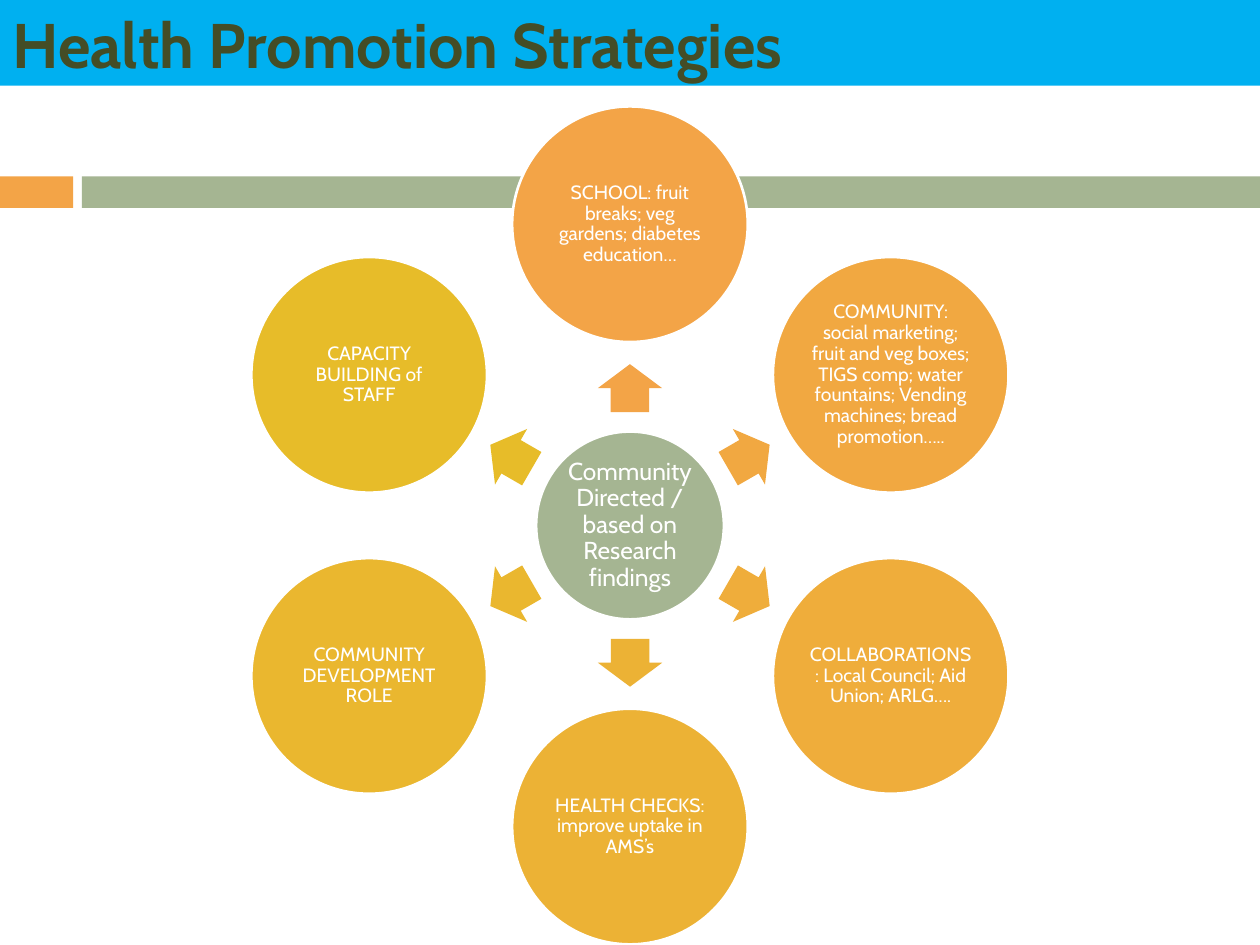
import math
from pptx import Presentation
from pptx import util as u
from pptx.dml.color import RGBColor
from pptx.enum import shapes, text

FONT = "Cabin"
WHITE = "FFFFFF"
SAGE = "A5B592"
HUB = (5, 4.17)
RING = 2.39
REACH = 1.09

SPOKES = [
    ("SCHOOL: fruit breaks; veg gardens; diabetes education…", "F3A447"),
    ("COMMUNITY: social marketing; fruit and veg boxes; TIGS comp; "
     "water fountains; Vending machines; bread promotion…..", "F1A841"),
    ("COLLABORATIONS: Local Council; Aid Union; ARLG….", "EFAD3B"),
    ("HEALTH CHECKS: improve uptake in AMS’s", "ECB235"),
    ("COMMUNITY DEVELOPMENT ROLE", "EAB72F"),
    ("CAPACITY BUILDING of STAFF", "E7BC29"),
]


def color(code):
    return RGBColor.from_string(code)


def polar(angle, dist):
    turn = math.radians(angle)
    return HUB[0] + dist * math.cos(turn), HUB[1] + dist * math.sin(turn)


class Deck:
    def __init__(self, slide):
        self.slide = slide

    def shape(self, kind, left, top, width, height, fill):
        item = self.slide.shapes.add_shape(
            kind, *map(u.Inches, (left, top, width, height)))
        item.shadow.inherit = False
        item.fill.solid()
        item.fill.fore_color.rgb = color(fill)
        item.line.fill.background()
        return item

    def bar(self, left, top, width, height, fill):
        return self.shape(shapes.MSO_SHAPE.RECTANGLE, left, top, width, height, fill)

    def label(self, item, words, size, ink, align, inset):
        frame = item.text_frame
        frame.word_wrap = True
        frame.vertical_anchor = text.MSO_ANCHOR.MIDDLE
        frame.margin_left = frame.margin_right = u.Inches(inset)
        frame.margin_top = frame.margin_bottom = u.Inches(0.02)
        para = frame.paragraphs[0]
        para.text = words
        para.alignment = align
        para.font.name = FONT
        para.font.size = u.Pt(size)
        para.font.color.rgb = color(ink)
        return para

    def title(self, words):
        band = self.bar(0, 0, 10, 0.68, "00B0F0")
        para = self.label(band, words, 36, "444D26", text.PP_ALIGN.LEFT, 0.1)
        para.font.bold = True

    def disc(self, center, size, fill, words, points):
        x, y = center
        item = self.shape(shapes.MSO_SHAPE.OVAL, x - size / 2, y - size / 2,
                          size, size, fill)
        item.line.color.rgb = color(WHITE)
        item.line.width = u.Pt(1.5)
        para = self.label(item, words, points, WHITE, text.PP_ALIGN.CENTER, 0.02)
        para.line_spacing = 0.9

    def arrow(self, center, angle, fill):
        x, y = center
        width, height = 0.38, 0.51
        item = self.shape(shapes.MSO_SHAPE.RIGHT_ARROW, x - width / 2,
                          y - height / 2, width, height, fill)
        item.adjustments[0] = 0.6
        item.adjustments[1] = 0.5
        item.rotation = angle % 360


def main():
    show = Presentation()
    show.slide_width = u.Inches(10)
    show.slide_height = u.Inches(7.5)
    deck = Deck(show.slides.add_slide(show.slide_layouts[6]))

    deck.bar(0, 1.4, 0.58, 0.25, "F3A447")
    deck.bar(0.65, 1.4, 9.35, 0.25, SAGE)
    deck.title("Health Promotion Strategies")
    deck.disc(HUB, 1.49, SAGE,
              "Community Directed / based on Research findings", 14)
    for step, (words, fill) in enumerate(SPOKES):
        angle = step * 360 / len(SPOKES) - 90
        deck.arrow(polar(angle, REACH), angle, fill)
        deck.disc(polar(angle, RING), 1.87, fill, words, 11)

    show.save("out.pptx")


if __name__ == "__main__":
    main()
